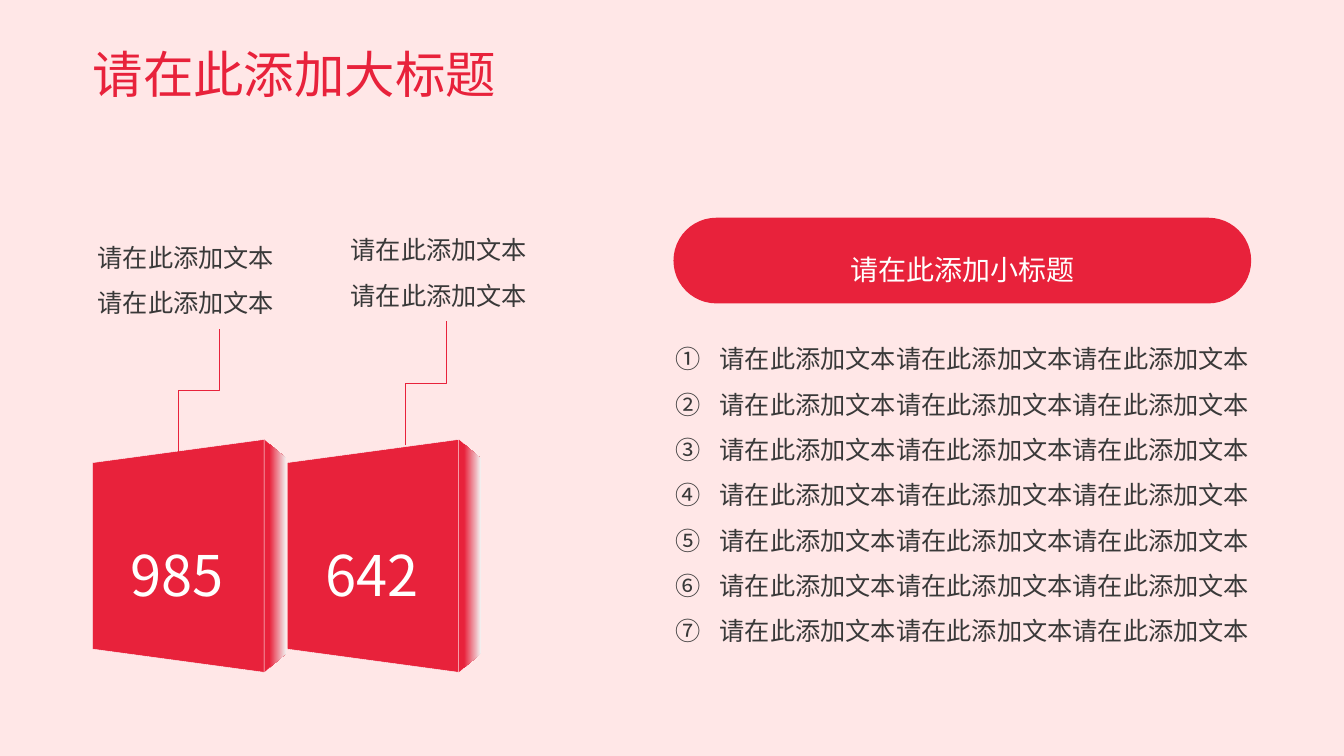
from lxml.etree import SubElement
from pptx import Presentation
from pptx.dml.color import RGBColor
from pptx.enum.shapes import MSO_CONNECTOR as Connector, MSO_SHAPE as Shape
from pptx.enum.text import MSO_ANCHOR as Anchor, PP_ALIGN as Align
from pptx.oxml.ns import qn
from pptx.util import Inches, Pt

# Content
TITLE = "请在此添加大标题"
SUBTITLE = "请在此添加小标题"
PHRASE = "请在此添加文本"
LIST_ITEMS = [PHRASE * 3] * 7
# number, front left, label left, label top, connector foot (x, y)
CARDS = [
    ("985", 0.92, 0.87, 2.20, (1.77, 4.49)),
    ("642", 2.85, 3.38, 2.13, (4.02, 4.42)),
]

# Style
FONT = "Noto Sans CJK SC"
RED = RGBColor(0xE8, 0x22, 0x3B)
PINK = RGBColor(0xFF, 0xE7, 0xE7)
PALE = RGBColor(0xF2, 0xF2, 0xF2)
WHITE = RGBColor(0xFF, 0xFF, 0xFF)
OFF_WHITE = RGBColor(0xFF, 0xFF, 0xFE)
DARK = RGBColor(0x39, 0x39, 0x39)
LINE_PITCH = 1.8  # line height as a multiple of the text size

# Card geometry
CARD_TOP, CARD_BOTTOM, CARD_WIDTH = 4.36, 6.67, 1.70
FRONT_SLANT, SIDE_SLANT, SIDE_WIDTH = 0.23, 0.19, 0.22
STEP_WIDTH, STEP_HEIGHT = 0.41, 1.23

presentation = Presentation()
presentation.slide_width, presentation.slide_height = Inches(13.33), Inches(7.5)
slide = presentation.slides.add_slide(presentation.slide_layouts[6])
slide.background.fill.solid()
slide.background.fill.fore_color.rgb = PINK


def write(shape, lines, size, color, align=Align.LEFT, anchor=Anchor.TOP, spacing=None):
    frame = shape.text_frame
    frame.word_wrap = True
    frame.vertical_anchor = anchor
    frame.text = "\n".join(lines)
    for paragraph in frame.paragraphs:
        paragraph.alignment = align
        paragraph.line_spacing = spacing or Pt(size * LINE_PITCH)
        font = paragraph.font
        font.size, font.name = Pt(size), FONT
        font.color.rgb = color
        SubElement(font._element, qn("a:ea"), typeface=FONT)
    return frame


def add_text(box, *args, **options):
    return write(slide.shapes.add_textbox(*map(Inches, box)), *args, **options)


def add_outline(points):
    start, *others = [(Inches(x), Inches(y)) for x, y in points]
    builder = slide.shapes.build_freeform(*start)
    builder.add_line_segments(others, close=True)
    shape = builder.convert_to_shape()
    shape.shadow.inherit = False
    return shape


def add_card(left):
    right = left + CARD_WIDTH
    # Shaded side
    side = add_outline([
        (right, CARD_BOTTOM), (right + SIDE_WIDTH, CARD_BOTTOM - SIDE_SLANT),
        (right + SIDE_WIDTH, CARD_TOP + SIDE_SLANT), (right, CARD_TOP)])
    side.line.fill.background()
    side.fill.gradient()
    side.fill.gradient_angle = 0
    for stop, position, color in zip(side.fill.gradient_stops, (0.24, 1), (RED, PALE)):
        stop.position = position
        stop.color.rgb = color
    # Front
    front = add_outline([
        (right, CARD_TOP), (right, CARD_BOTTOM),
        (left, CARD_BOTTOM - FRONT_SLANT), (left, CARD_TOP + FRONT_SLANT)])
    front.fill.solid()
    front.fill.fore_color.rgb = RED
    front.line.color.rgb = WHITE
    front.line.width = Pt(0.25)


def add_step_line(foot_x, foot_y):
    # The elbow is laid flat around its centre, then turned upright
    middle_x, middle_y = foot_x + STEP_WIDTH / 2, foot_y - STEP_HEIGHT / 2
    half_x, half_y = STEP_HEIGHT / 2, STEP_WIDTH / 2
    ends = (middle_x + half_x, middle_y + half_y, middle_x - half_x, middle_y - half_y)
    connector = slide.shapes.add_connector(Connector.ELBOW, *map(Inches, ends))
    connector.line.color.rgb = RED
    connector.line.width = Pt(0.5)
    properties = connector._element.spPr
    properties.find(qn("a:xfrm")).set("rot", "5400000")
    SubElement(properties, qn("a:effectLst"))


# Title
add_text((0.82, 0.3, 9.52, 0.93), [TITLE], 36, RED, anchor=Anchor.MIDDLE, spacing=0.9)

# Cards with numbers, connectors and labels
for number, left, label_left, label_top, foot in CARDS:
    add_card(left)
    add_text((left, 4.98, 1.68, 1.11), [number], 40, OFF_WHITE, align=Align.CENTER)
    add_step_line(*foot)
    add_text((label_left, label_top, 2.1, 1.01), [PHRASE * 2], 18, DARK)

# Numbered list
list_frame = add_text((6.6, 3.21, 6.29, 3.28), LIST_ITEMS, 18, DARK)
for paragraph in list_frame.paragraphs:
    properties = paragraph._p.get_or_add_pPr()
    properties.set("marL", str(Inches(0.44)))
    properties.set("indent", str(-Inches(0.44)))
    bullet = SubElement(properties, qn("a:buAutoNum"), type="circleNumDbPlain")
    properties.find(qn("a:defRPr")).addprevious(bullet)

# Subtitle pill
pill = slide.shapes.add_shape(Shape.ROUNDED_RECTANGLE, *map(Inches, (6.68, 2.16, 5.73, 0.85)))
pill.adjustments[0] = 0.5
pill.shadow.inherit = False
pill.fill.solid()
pill.fill.fore_color.rgb = RED
pill.line.fill.background()
write(pill, [SUBTITLE], 20, OFF_WHITE, align=Align.CENTER, anchor=Anchor.MIDDLE)

presentation.save("out.pptx")
